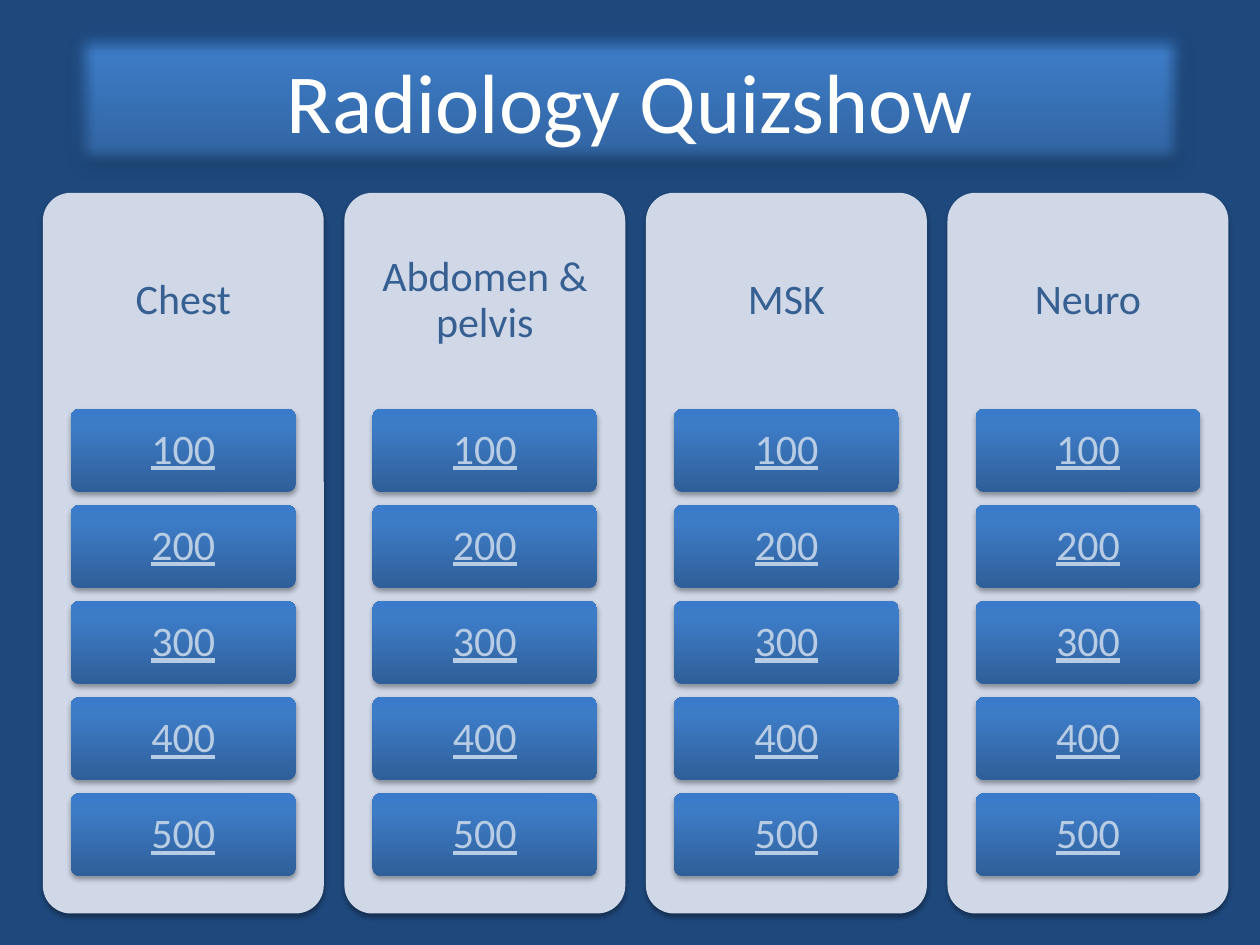
from lxml.etree import SubElement
from pptx import Presentation
from pptx.dml.color import RGBColor
from pptx.enum.shapes import MSO_SHAPE as SHAPE
from pptx.enum.text import MSO_ANCHOR as ANCHOR, PP_ALIGN as ALIGN
from pptx.oxml import parse_xml
from pptx.oxml.ns import nsdecls, qn
from pptx.util import Inches, Pt

rgb = RGBColor.from_string
GRADIENT = [(0, "2F5F99"), (80, "3D7CC7"), (100, "3A7CCB")]


def box(kind, x, y, w, h, fill=None, alpha=35, blur=3.1, dist=1.8):
    sp = s.shapes.add_shape(kind, Inches(x), Inches(y), Inches(w), Inches(h))
    if kind == SHAPE.ROUNDED_RECTANGLE:
        sp.adjustments[0] = 0.1
    sp.line.fill.background()
    sp.shadow.inherit = False
    if fill:
        sp.fill.solid()
        sp.fill.fore_color.rgb = rgb(fill)
    else:
        sp.fill.gradient()
        sp.fill.gradient_angle = 90
        stops = sp._element.spPr.find(qn("a:gradFill")).find(qn("a:gsLst"))
        stops.clear()
        for pos, color in GRADIENT:
            gs = SubElement(stops, qn("a:gs"), pos=str(pos * 1000))
            SubElement(gs, qn("a:srgbClr"), val=color)
    sp._element.spPr.find(qn("a:effectLst")).append(parse_xml(
        f'<a:outerShdw {nsdecls("a")} blurRad="{Pt(blur)}" dist="{Pt(dist)}" dir="5400000" rotWithShape="0">'
        f'<a:srgbClr val="000000"><a:alpha val="{alpha * 1000}"/></a:srgbClr></a:outerShdw>'))
    return sp


def write(sp, text, size, color, inset_x=0.1, inset_y=0.05, spacing=0.9, underline=None):
    tf = sp.text_frame
    tf.word_wrap = True
    tf.vertical_anchor = ANCHOR.MIDDLE
    tf.margin_left = tf.margin_right = Inches(inset_x)
    tf.margin_top = tf.margin_bottom = Inches(inset_y)
    tf.text = text
    p = tf.paragraphs[0]
    p.alignment = ALIGN.CENTER
    p.line_spacing = spacing
    f = p.runs[0].font
    f.name, f.size, f.underline = "Calibri", Pt(size), underline
    f.color.rgb = rgb(color)


prs = Presentation()
prs.slide_width, prs.slide_height = Inches(10), Inches(7.5)
s = prs.slides.add_slide(prs.slide_layouts[6])
s.background.fill.solid()
s.background.fill.fore_color.rgb = rgb("1F497D")

LEFT, TOP, COL_W, COL_H = 0.34, 1.53, 2.23, 5.72
COL_STEP = (7.52 - LEFT) / 3
HEAD_H = 0.3 * COL_H
BTN_W, BTN_H = 0.8 * COL_W, 0.66
ROW_STEP = (6.3 - 3.25) / 4

for col, category in enumerate(["Chest", "Abdomen & pelvis", "MSK", "Neuro"]):
    x = LEFT + col * COL_STEP
    box(SHAPE.ROUNDED_RECTANGLE, x, TOP, COL_W, COL_H, "D0D8E8")
    head = s.shapes.add_textbox(Inches(x), Inches(TOP), Inches(COL_W), Inches(HEAD_H))
    write(head, category, 24, "376092", inset_y=0.1)
    for row in range(5):
        button = box(SHAPE.ROUNDED_RECTANGLE, x + (COL_W - BTN_W) / 2,
                     TOP + HEAD_H + row * ROW_STEP, BTN_W, BTN_H)
        write(button, str(100 * (row + 1)), 24, "B8CCE4", inset_x=0.07, underline=True)

title = box(SHAPE.RECTANGLE, 0.5, 0.17, 9, 1.25, alpha=32, blur=3.5, dist=2.2)
SubElement(title._element.spPr.find(qn("a:effectLst")), qn("a:softEdge"), rad=str(Pt(10)))
write(title, "Radiology Quizshow", 48, "FFFFFF", spacing=1.0)

prs.save("out.pptx")
